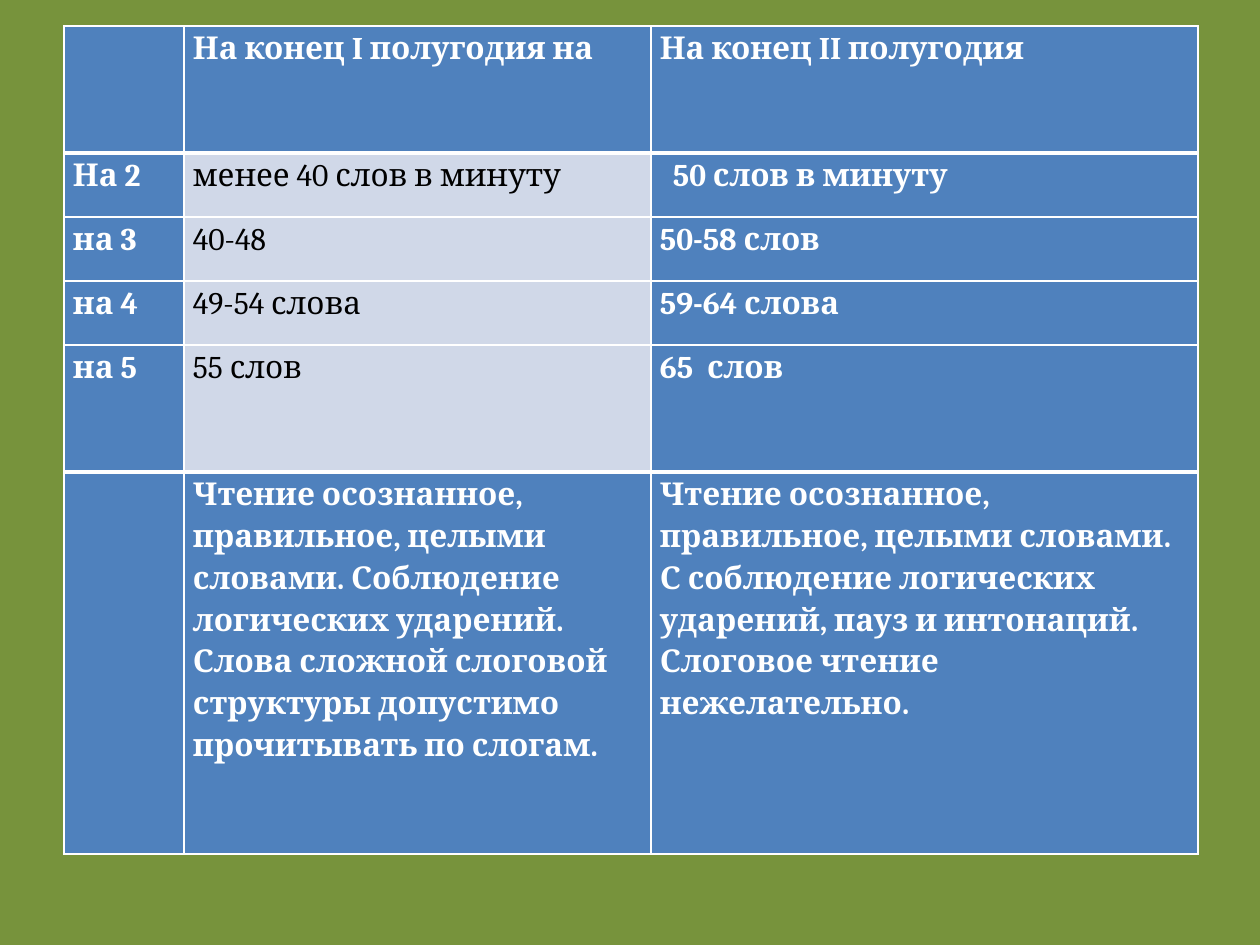
from lxml import etree
from pptx import Presentation
from pptx.dml.color import RGBColor
from pptx.oxml.ns import qn
from pptx.util import Pt

PX = 7257  # EMU in one px, 126 px to the inch
SLIDE_WIDTH, SLIDE_HEIGHT = 1260, 945
BLANK_LAYOUT = 6

COLORS = {
    "background": "77933C",
    "header": "4F81BD",
    "body": "D0D8E8",
    "light": "FFFFFF",
    "dark": "000000",
}
FONT, FONT_SIZE, LINE_SPACING = "Cambria", 18, 1.15
THIN, THICK = 1, 3

COLUMN_WIDTHS = [120, 467, 547]
ROW_HEIGHTS = [127, 64, 64, 64, 127, 382]
THICK_RULES = {1, 5}  # below the heading row and above the summary row
SIDE_MARGIN = 9
INDENTED_CELL, INDENT = (1, 2), 13

READING_NORMS = [
    ["", "На конец I полугодия на", "На конец II полугодия"],
    ["На 2", "менее 40 слов в минуту", "50 слов в минуту"],
    ["на 3", "40-48", "50-58 слов"],
    ["на 4", "49-54 слова", "59-64 слова"],
    ["на 5", "55 слов", "65  слов"],
    [
        "",
        "Чтение осознанное, правильное, целыми словами. Соблюдение логических "
        "ударений. Слова сложной слоговой структуры допустимо прочитывать по слогам.",
        "Чтение осознанное, правильное, целыми словами. С соблюдение логических "
        "ударений, пауз и интонаций. Слоговое чтение нежелательно.",
    ],
]


def rgb(name):
    return RGBColor.from_string(COLORS[name])


def add_borders(cell, row):
    """Draw white cell edges, heavier on the thick horizontal rules."""
    properties = cell._tc.get_or_add_tcPr()
    top, bottom = (THICK if rule in THICK_RULES else THIN for rule in (row, row + 1))
    for tag, width in (("a:lnL", THIN), ("a:lnR", THIN), ("a:lnT", top), ("a:lnB", bottom)):
        edge = etree.SubElement(properties, qn(tag), w=str(Pt(width)))
        fill = etree.SubElement(edge, qn("a:solidFill"))
        etree.SubElement(fill, qn("a:srgbClr"), val=COLORS["light"])


def fill_cell(cell, row, column, wording):
    is_body = column == 1 and 0 < row < len(READING_NORMS) - 1
    add_borders(cell, row)
    cell.fill.solid()
    cell.fill.fore_color.rgb = rgb("body" if is_body else "header")

    indent = INDENT if (row, column) == INDENTED_CELL else 0
    cell.margin_left = (SIDE_MARGIN + indent) * PX
    cell.margin_right = SIDE_MARGIN * PX
    cell.margin_top = cell.margin_bottom = 0

    if wording:
        paragraph = cell.text_frame.paragraphs[0]
        paragraph.line_spacing = LINE_SPACING
        run = paragraph.add_run()
        run.text = wording
        run.font.name = FONT
        run.font.size = Pt(FONT_SIZE)
        run.font.bold = not is_body
        run.font.color.rgb = rgb("dark" if is_body else "light")


def add_norms_table(slide, left, top):
    width, height = sum(COLUMN_WIDTHS), sum(ROW_HEIGHTS)
    norms = slide.shapes.add_table(
        len(ROW_HEIGHTS), len(COLUMN_WIDTHS),
        left * PX, top * PX, width * PX, height * PX,
    ).table
    for column, column_width in zip(norms.columns, COLUMN_WIDTHS):
        column.width = column_width * PX
    for row, row_height in zip(norms.rows, ROW_HEIGHTS):
        row.height = row_height * PX
    for row, wordings in enumerate(READING_NORMS):
        for column, wording in enumerate(wordings):
            fill_cell(norms.cell(row, column), row, column, wording)


def main():
    presentation = Presentation()
    presentation.slide_width = SLIDE_WIDTH * PX
    presentation.slide_height = SLIDE_HEIGHT * PX
    slide = presentation.slides.add_slide(presentation.slide_layouts[BLANK_LAYOUT])

    # Green background
    slide.background.fill.solid()
    slide.background.fill.fore_color.rgb = rgb("background")

    # Reading speed norms by mark and half-year
    add_norms_table(slide, left=64, top=26)
    presentation.save("out.pptx")


if __name__ == "__main__":
    main()
